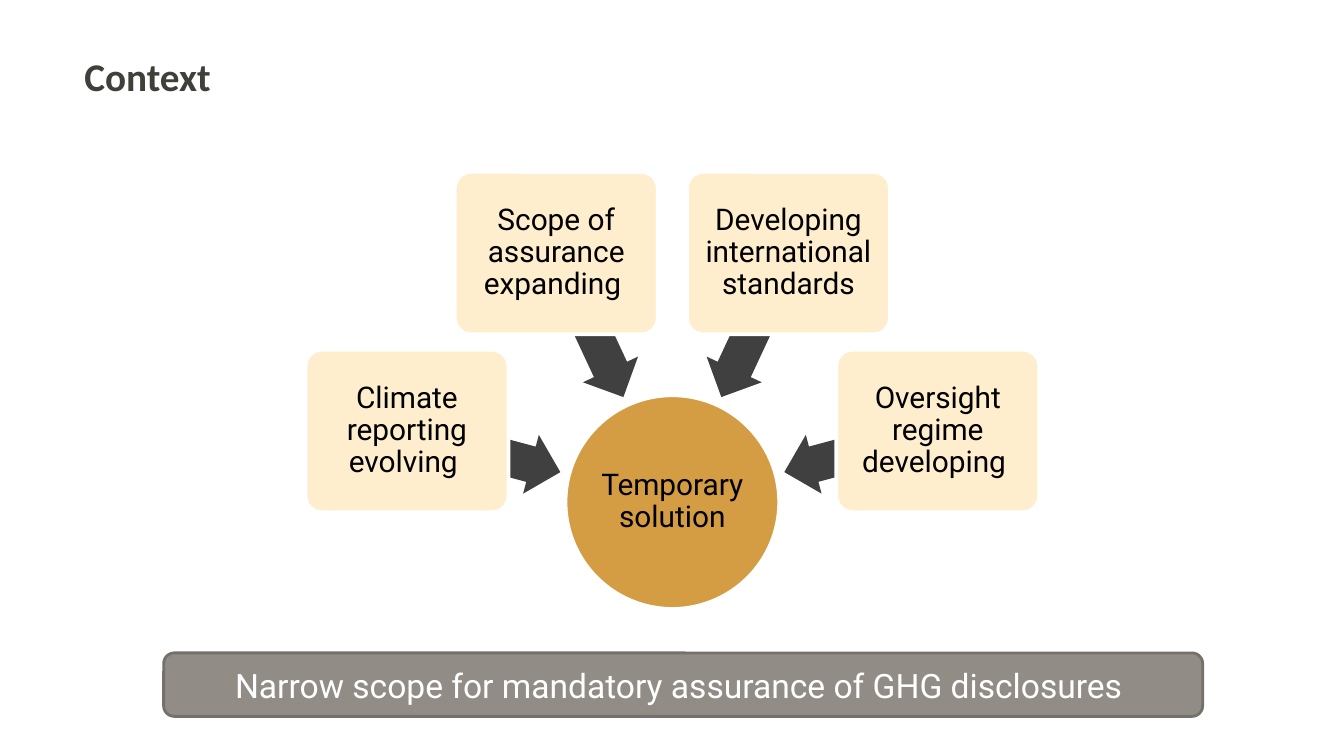
from dataclasses import dataclass
from math import cos, radians, sin

from pptx import Presentation
from pptx.dml.color import RGBColor as RGB
from pptx.enum.shapes import MSO_SHAPE as Kind
from pptx.enum.text import MSO_ANCHOR as Anchor, MSO_AUTO_SIZE as Fit, PP_ALIGN as Align
from pptx.util import Pt


@dataclass(frozen=True)
class Theme:
    head: str = "Calibri"
    body: str = "Roboto"
    white: str = "FFFFFF"
    black: str = "000000"
    title: str = "3F403A"
    hub: str = "D59D43"
    card: str = "FFEECD"
    arrow: str = "404040"
    bar: str = "918C85"
    edge: str = "757069"
    big: float = 21
    mid: float = 18
    small: float = 16


def write(frame, text, *, font, size, color, bold=False, align=Align.CENTER,
          anchor=Anchor.MIDDLE, inset=None, space=None):
    frame.word_wrap = True
    frame.auto_size = Fit.NONE
    frame.vertical_anchor = anchor
    if inset is not None:
        frame.margin_left = frame.margin_right = Pt(inset)
        frame.margin_top = frame.margin_bottom = Pt(inset)
    para = frame.paragraphs[0]
    para.alignment = align
    if space:
        para.line_spacing = space
    run = para.add_run()
    run.text = text
    run.font.name = font
    run.font.size = Pt(size)
    run.font.bold = bold
    run.font.color.rgb = RGB.from_string(color)


class Canvas:
    def __init__(self, slide, theme):
        self.slide = slide
        self.theme = theme

    def shape(self, kind, x, y, wide, high, fill, line=None, weight=2, adjust=(), turn=0):
        """Add a preset shape centred on x, y."""
        item = self.slide.shapes.add_shape(
            kind, Pt(x - wide / 2), Pt(y - high / 2), Pt(wide), Pt(high))
        item.shadow.inherit = False
        item.fill.solid()
        item.fill.fore_color.rgb = RGB.from_string(fill)
        if line:
            item.line.color.rgb = RGB.from_string(line)
            item.line.width = Pt(weight)
        else:
            item.line.fill.background()
        for i, value in enumerate(adjust):
            item.adjustments[i] = value
        item.rotation = turn
        return item

    def title(self, text):
        look = self.theme
        item = self.slide.shapes.title
        item.left, item.top, item.width, item.height = Pt(38), Pt(24.5), Pt(481), Pt(55.5)
        write(item.text_frame, text, font=look.head, size=look.big, color=look.title,
              bold=True, align=Align.LEFT, anchor=Anchor.TOP)

    def label(self, item, text, inset):
        look = self.theme
        write(item.text_frame, text, font=look.body, size=look.small,
              color=look.black, inset=inset, space=0.9)

    def hub(self, text, x, y):
        look = self.theme
        item = self.shape(Kind.OVAL, x, y, 114.5, 114.5, look.hub, look.white)
        self.label(item, text, 0.7)

    def arrow(self, x, y, turn):
        self.shape(Kind.LEFT_ARROW, x, y, 85, 32.6, self.theme.arrow,
                   adjust=(0.6, 0.5), turn=turn)

    def card(self, text, x, y):
        look = self.theme
        item = self.shape(Kind.ROUNDED_RECTANGLE, x, y, 108.7, 87, look.card,
                          look.white, adjust=(0.1,))
        self.label(item, text, 2)

    def bar(self, text):
        look = self.theme
        item = self.shape(Kind.ROUNDED_RECTANGLE, 366, 366.8, 556.6, 34,
                          look.bar, look.edge, weight=1.5)
        write(item.text_frame, text, font=look.body, size=look.mid, color=look.white)


def main():
    deck = Presentation()
    deck.slide_width, deck.slide_height = Pt(720), Pt(405)
    page = Canvas(deck.slides.add_slide(deck.slide_layouts[5]), Theme())
    page.title("Context")

    mid_x, mid_y = 360.2, 269
    near, far = 104.6, 147.2

    def spot(reach, angle):
        """Return the point at this distance and angle from the hub."""
        turn = radians(angle)
        return mid_x + reach * cos(turn), mid_y + reach * sin(turn)

    page.hub("Temporary solution", mid_x, mid_y)
    causes = ["Climate reporting evolving ", "Scope of assurance expanding ",
              "Developing international standards", "Oversight regime developing "]
    for i, cause in enumerate(causes):
        angle = 195 + 50 * i
        page.arrow(*spot(near, angle), angle)
        page.card(cause, *spot(far, angle))

    page.bar("Narrow scope for mandatory assurance of GHG disclosures ")
    deck.save("out.pptx")


if __name__ == "__main__":
    main()
